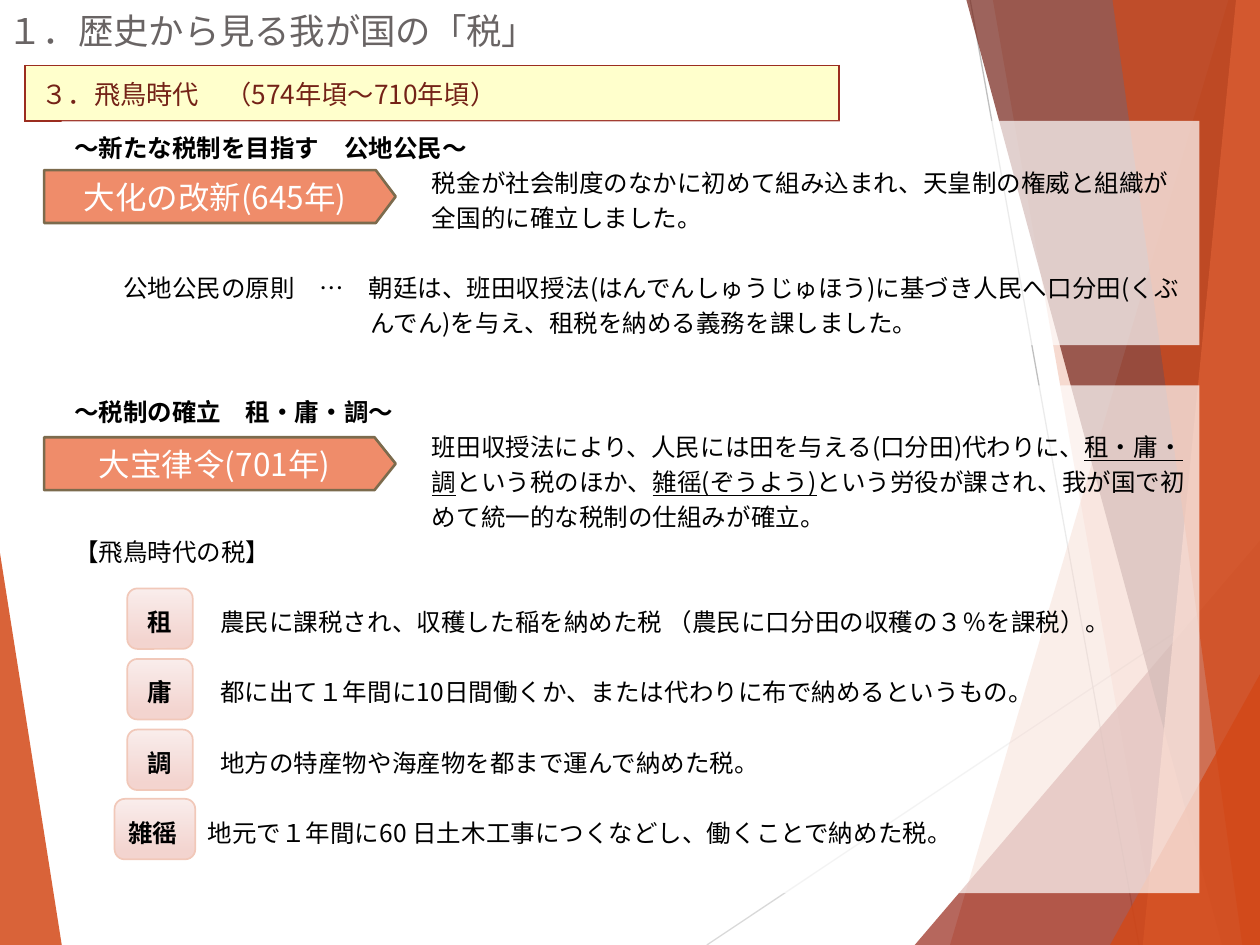
import pptx
import pptx.util
import pptx.dml.color
import pptx.enum.shapes
import pptx.enum.text
import pptx.oxml
import pptx.oxml.ns
from lxml import etree

Inches, Pt = pptx.util.Inches, pptx.util.Pt
RGBColor = pptx.dml.color.RGBColor
MSO_SHAPE = pptx.enum.shapes.MSO_SHAPE
MSO_ANCHOR = pptx.enum.text.MSO_ANCHOR
PP_ALIGN = pptx.enum.text.PP_ALIGN
qn = pptx.oxml.ns.qn

FONT = "Noto Sans CJK JP"
ORANGE = RGBColor(0xD3, 0x48, 0x17)
RED = RGBColor(0x9B, 0x2D, 0x1F)
MAROON = RGBColor(0x74, 0x22, 0x17)
SALMON = RGBColor(0xEF, 0x8C, 0x6A)
PINK = RGBColor(0xED, 0xC5, 0xC0)
ROSE = RGBColor(0xD8, 0x6F, 0x5F)
BROWN = RGBColor(0x7C, 0x6B, 0x4D)
YELLOW = RGBColor(0xFF, 0xFF, 0xCC)
GREY = RGBColor(0x69, 0x64, 0x64)
LIGHT_GREY = RGBColor(0xD9, 0xD9, 0xD9)
MID_GREY = RGBColor(0xBF, 0xBF, 0xBF)
WHITE = RGBColor(0xFF, 0xFF, 0xFF)
BLACK = RGBColor(0, 0, 0)


def fill_clear(shape, color, percent):
    """Fill with a colour of the given opacity, without line or shadow."""
    shape.shadow.inherit = False
    shape.line.fill.background()
    shape.fill.solid()
    shape.fill.fore_color.rgb = color
    clr = shape.fill._xPr.find(".//" + qn("a:srgbClr"))
    etree.SubElement(clr, qn("a:alpha"), val=str(percent * 1000))


def style_run(r, size, color, bold=False, underline=False):
    r.font.size, r.font.bold, r.font.underline = Pt(size), bold, underline
    r.font.color.rgb = color
    r.font.name = FONT
    etree.SubElement(r.font._element, qn("a:ea"), typeface=FONT)


prs = pptx.Presentation()
prs.slide_width, prs.slide_height = Inches(10), Inches(7.5)
s = prs.slides.add_slide(prs.slide_layouts[5])

# Background facets and thin lines
facets = [
    (ORANGE, 85, [(0, 4.39), (0.49, 7.5), (0, 7.5)]),
    (ORANGE, 30, [(9.75, 0), (7.54, 7.5), (10, 7.5), (10, 0)]),
    (ORANGE, 20, [(7.88, 0), (9.19, 7.5), (10, 7.5), (10, 0)]),
    (RED, 72, [(7.26, 7.5), (10, 4.29), (10, 7.5)]),
    (MAROON, 70, [(7.67, 0), (9.7, 7.5), (10, 7.5), (10, 0)]),
    (SALMON, 70, [(9.81, 0), (9.07, 7.5), (10, 7.5), (10, 0)]),
    (ORANGE, 65, [(8.83, 0), (9.86, 7.5), (10, 7.5), (10, 0)]),
    (ORANGE, 80, [(8.81, 7.5), (10, 5.35), (10, 7.5)]),
]
thin_lines = [(5.61, 7.5, 10, 4.57, LIGHT_GREY), (7.7, 0, 9.04, 7.5, MID_GREY)]
for x1, y1, x2, y2, color in thin_lines:
    line = s.shapes.add_connector(pptx.enum.shapes.MSO_CONNECTOR.STRAIGHT,
                                  Inches(x1), Inches(y1), Inches(x2), Inches(y2))
    line.line.color.rgb = color
    line.line.width = Pt(0.75)
    etree.SubElement(line._element.spPr, qn("a:effectLst"))
for color, percent, points in facets:
    corners = [(Inches(x), Inches(y)) for x, y in points]
    builder = s.shapes.build_freeform(*corners[0])
    builder.add_line_segments(corners[1:], close=True)
    fill_clear(builder.convert_to_shape(), color, percent)

# Title
title = s.shapes.title
title.left, title.top, title.width, title.height = Inches(0), Inches(0.02), Inches(5.47), Inches(0.45)
tf = title.text_frame
tf.text = "１．歴史から見る我が国の「税」"
tf.vertical_anchor = MSO_ANCHOR.MIDDLE
tf.margin_left = Inches(0.06)
tf.margin_top = tf.margin_right = tf.margin_bottom = 0
tf.paragraphs[0].alignment = PP_ALIGN.LEFT
style_run(tf.paragraphs[0].runs[0], 20.2, GREY)

# Era heading: a one-cell table
table = s.shapes.add_table(1, 1, Inches(0.2), Inches(0.52), Inches(6.46), Inches(0.38)).table
cell = table.cell(0, 0)
cell.text = "３．飛鳥時代　（574年頃～710年頃）"
cell.margin_left = cell.margin_right = Inches(0.13)
cell.margin_top = cell.margin_bottom = Inches(0.07)
style_run(cell.text_frame.paragraphs[0].runs[0], 15, MAROON)
tcPr = cell._tc.get_or_add_tcPr()
for side in ("a:lnL", "a:lnR", "a:lnT", "a:lnB"):
    ln = etree.SubElement(tcPr, qn(side), w=str(Pt(1)))
    etree.SubElement(etree.SubElement(ln, qn("a:solidFill")), qn("a:srgbClr"), val=str(RED))
cell.fill.solid()
cell.fill.fore_color.rgb = YELLOW

# Tiles behind the tax names
for left, top, width in [(1.01, 4.67, 0.52), (1.01, 5.23, 0.52), (1.01, 5.79, 0.52), (0.91, 6.34, 0.64)]:
    sp = s.shapes.add_shape(MSO_SHAPE.ROUNDED_RECTANGLE, Inches(left), Inches(top),
                            Inches(width), Inches(0.48))
    sp.shadow.inherit = False
    sp.fill.gradient()
    sp.fill.gradient_angle = 270
    for stop, position, color in zip(sp.fill.gradient_stops, (0, 0.88), (PINK, ROSE)):
        stop.position = position
        stop.color.rgb = color
    sp.line.color.rgb = ORANGE
    sp.line.width = Pt(1)

# Translucent panels; paragraph: left margin, first-line indent, space before, runs (b bold, u underlined)
panels = [
    (0.96, 1.78, [
        (0, 0, 0, [("～新たな税制を目指す　公地公民～", "b")]),
        (2.84, 0, 0, [("税金が社会制度のなかに初めて組み込まれ、天皇制の権威と組織が全国的に確立しました。", "")]),
        (2.35, -1.96, 20, [("公地公民の原則　…　朝廷は、班田収授法(はんでんしゅうじゅほう)に基づき人民へ口分田"
                            "(くぶんでん)を与え、租税を納める義務を課しました。", "")]),
    ]),
    (3.06, 4.03, [
        (0, 0, 0, [("～税制の確立　租・庸・調～", "b")]),
        (2.84, 0, 0, [("班田収授法により、人民には田を与える(口分田)代わりに、", ""), ("租・庸・調", "u"),
                      ("という税のほか、", ""), ("雑徭(ぞうよう)", "u"),
                      ("という労役が課され、我が国で初めて統一的な税制の仕組みが確立。", "")]),
        (0, 0, 0, [("【飛鳥時代の税】", "")]),
        (1.16, -0.58, 20, [("租", "b"), ("\t農民に課税され、収穫した稲を納めた税 （農民に口分田の収穫の３％を課税）。", "")]),
        (1.16, -0.58, 20, [("庸", "b"), ("\t都に出て１年間に10日間働くか、または代わりに布で納めるというもの。", "")]),
        (1.16, -0.58, 20, [("調", "b"), ("\t地方の特産物や海産物を都まで運んで納めた税。", "")]),
        (1.06, -0.63, 20, [("雑徭", "b"), ("\t地元で１年間に60 日土木工事につくなどし、働くことで納めた税。", "")]),
    ]),
]
for top, height, paragraphs in panels:
    sp = s.shapes.add_shape(MSO_SHAPE.RECTANGLE, Inches(0.49), Inches(top), Inches(9.03), Inches(height))
    fill_clear(sp, WHITE, 70)
    tf = sp.text_frame
    tf.word_wrap = True
    tf.vertical_anchor = MSO_ANCHOR.TOP
    for i, (margin, indent, before, runs) in enumerate(paragraphs):
        p = tf.paragraphs[0] if i == 0 else tf.add_paragraph()
        p.alignment = PP_ALIGN.LEFT
        p.line_spacing, p.space_before = Pt(20), Pt(before)
        pPr = p._p.get_or_add_pPr()
        pPr.set("marL", str(Inches(margin)))
        pPr.set("indent", str(Inches(indent)))
        for text, kind in runs:
            r = p.add_run()
            r.text = text
            style_run(r, 14, BLACK, kind == "b", kind == "u")

# Event arrows
for top, point, text in [(1.35, 0.375, "大化の改新(645年)"), (3.47, 0.4, "大宝律令(701年)")]:
    sp = s.shapes.add_shape(MSO_SHAPE.PENTAGON, Inches(0.35), Inches(top), Inches(2.79), Inches(0.42))
    sp.adjustments[0] = point
    sp.shadow.inherit = False
    sp.fill.solid()
    sp.fill.fore_color.rgb = SALMON
    sp.line.color.rgb = BROWN
    sp.line.width = Pt(1.5)
    tf = sp.text_frame
    tf.text = text
    tf.word_wrap = True
    tf.vertical_anchor = MSO_ANCHOR.MIDDLE
    tf.paragraphs[0].alignment = PP_ALIGN.CENTER
    style_run(tf.paragraphs[0].runs[0], 18, WHITE)

prs.save("out.pptx")
